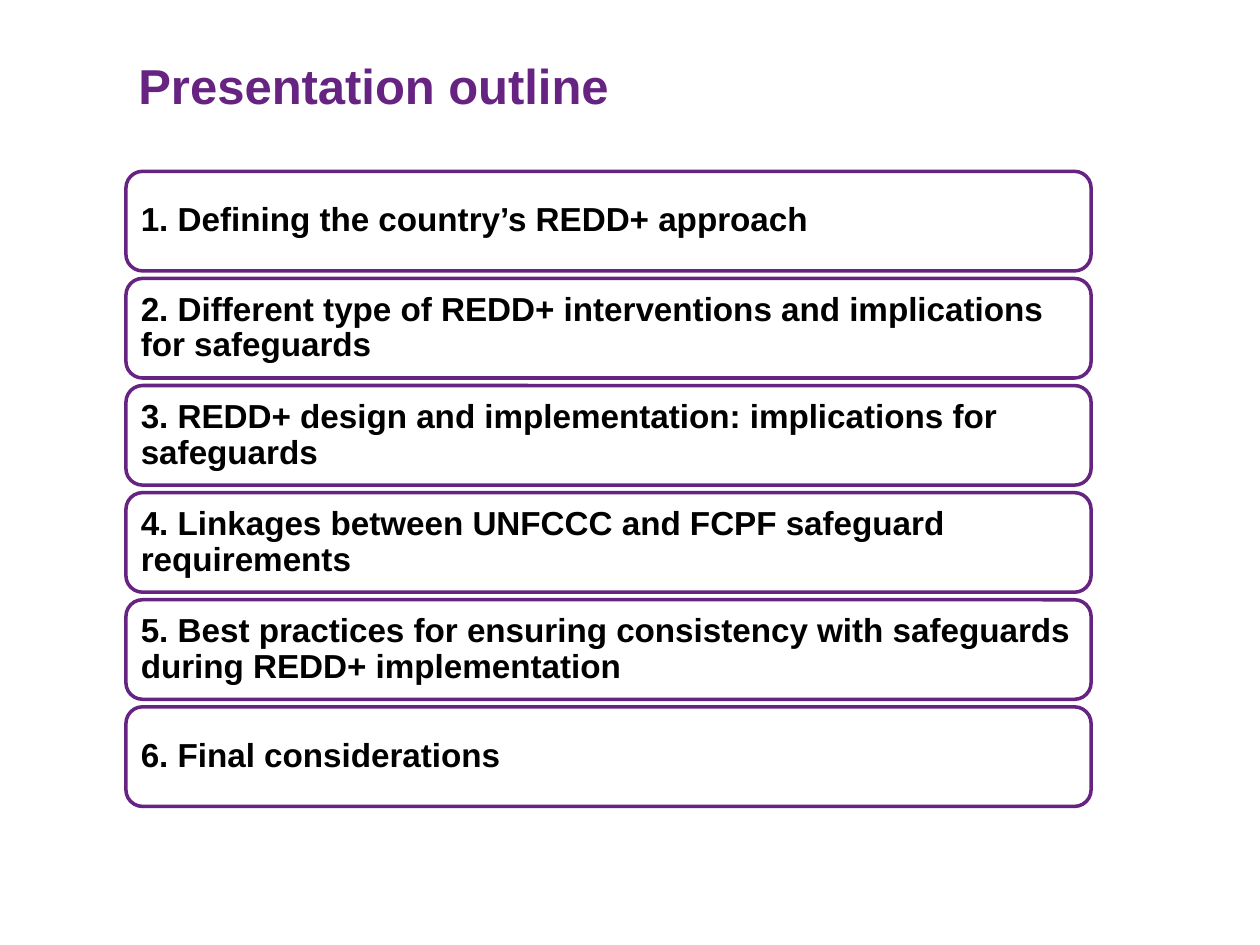
from pptx import Presentation
from pptx.dml.color import RGBColor
from pptx.enum.shapes import MSO_SHAPE as Shape
from pptx.enum.text import MSO_ANCHOR as Anchor, MSO_AUTO_SIZE as AutoSize, PP_ALIGN as Align
from pptx.util import Inches, Pt

PURPLE, WHITE, BLACK = "662382", "FFFFFF", "000000"
TOPICS = [
    "Defining the country’s REDD+ approach",
    "Different type of REDD+ interventions and implications for safeguards",
    "REDD+ design and implementation: implications for safeguards",
    "Linkages between UNFCCC and FCPF safeguard requirements",
    "Best practices for ensuring consistency with safeguards during REDD+ implementation",
    "Final considerations",
]


def color(value):
    return RGBColor.from_string(value)


def add_span(para, text, size, value):
    span = para.add_run()
    span.text = text
    span.font.name = "Arial"
    span.font.size = Pt(size)
    span.font.bold = True
    span.font.color.rgb = color(value)


deck = Presentation()
deck.slide_width, deck.slide_height = Inches(10), Inches(7.5)
page = deck.slides.add_slide(deck.slide_layouts[6])

# Title
title = page.shapes.add_textbox(Inches(1), Inches(0.39), Inches(5.18), Inches(0.57))
title.text_frame.word_wrap = True
title.text_frame.auto_size = AutoSize.SHAPE_TO_FIT_TEXT
add_span(title.text_frame.paragraphs[0], "Presentation outline", 28, PURPLE)

# Outline: one numbered box per topic, evenly stacked
for index, topic in enumerate(TOPICS):
    box = page.shapes.add_shape(Shape.ROUNDED_RECTANGLE, Inches(1), Inches(1.36 + 0.85 * index),
                                Inches(7.66), Inches(0.79))
    box.shadow.inherit = False
    box.fill.solid()
    box.fill.fore_color.rgb = color(WHITE)
    box.line.color.rgb = color(PURPLE)
    box.line.width = Pt(2)

    frame = box.text_frame
    frame.word_wrap = True
    frame.vertical_anchor = Anchor.MIDDLE
    frame.margin_left = frame.margin_right = Inches(0.08)
    frame.margin_top = frame.margin_bottom = Inches(0.08)
    para = frame.paragraphs[0]
    para.alignment = Align.LEFT
    para.line_spacing = 0.9
    add_span(para, f"{index + 1}. {topic}", 19, BLACK)

deck.save("out.pptx")
